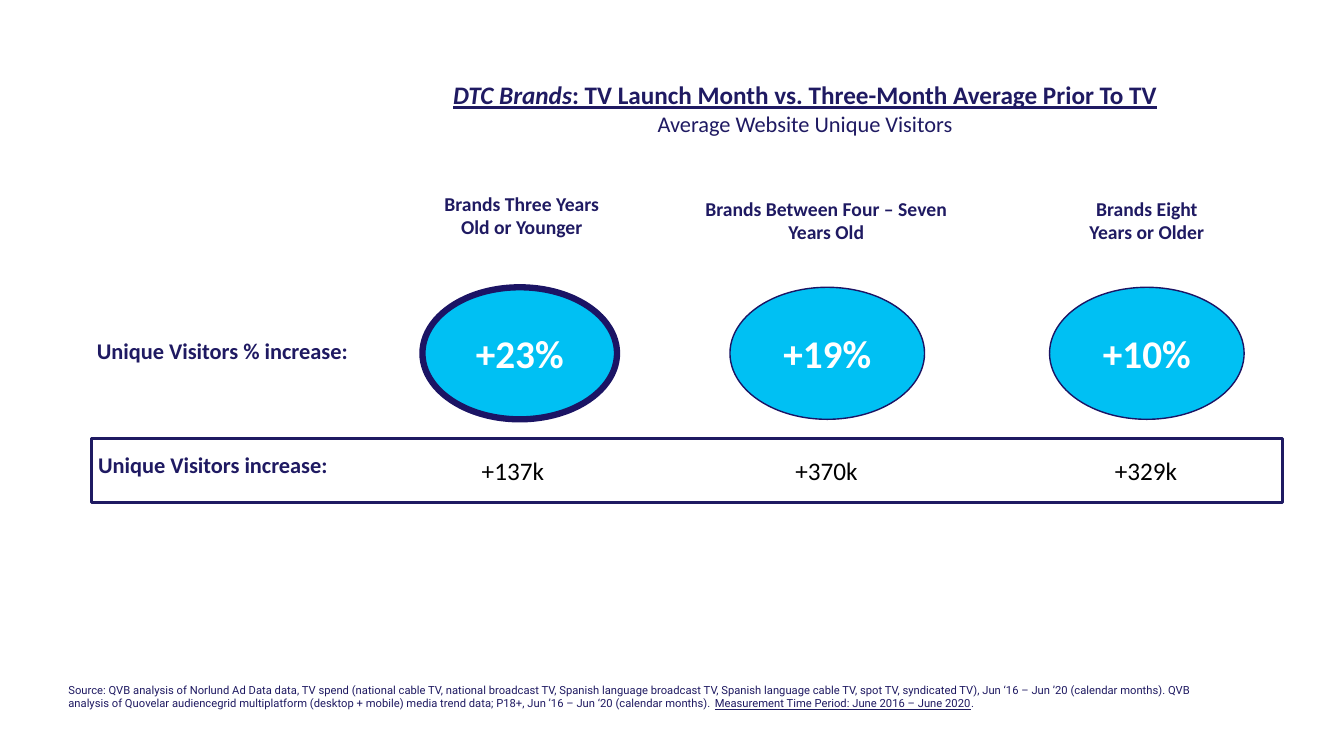
"""Build the slide on website visitors of DTC brands around their TV launch."""
from pptx import Presentation
from pptx.dml.color import RGBColor
from pptx.enum.shapes import MSO_SHAPE as Shape
from pptx.enum.text import MSO_ANCHOR as Anchor, MSO_AUTO_SIZE as AutoSize, PP_ALIGN as Align
from pptx.util import Inches, Pt

NAVY = RGBColor(0x1F, 0x1A, 0x62)
OUTLINE = RGBColor(0x1B, 0x14, 0x64)
CYAN = RGBColor(0x00, 0xC0, 0xF3)
WHITE = RGBColor(0xFF, 0xFF, 0xFF)
BLACK = RGBColor(0x00, 0x00, 0x00)

AGE_GROUPS = [
    ("Brands Three Years Old or Younger", (4.25, 1.85, 1.85, 0.57), "+23%", 4.19, 4.5, "+137k", 4.68),
    ("Brands Between Four – Seven Years Old", (6.81, 1.9, 2.77, 0.57), "+19%", 7.24, 1, "+370k", 7.79),
    ("Brands Eight Years or Older", (10.64, 1.9, 1.47, 0.57), "+10%", 10.41, 1, "+329k", 10.96),
]
SOURCE = (
    "Source: QVB analysis of Norlund Ad Data data, TV spend (national cable TV, national broadcast TV, "
    "Spanish language broadcast TV, Spanish language cable TV, spot TV, syndicated TV), "
    "Jun ‘16 – Jun ’20 (calendar months). QVB analysis of Quovelar audiencegrid multiplatform "
    "(desktop + mobile) media trend data; P18+, Jun ’16 – Jun ‘20 (calendar months). "
)


def add_span(para, text, size, color=NAVY, bold=False, italic=False, underline=False, font="Calibri"):
    """Add one formatted run to a paragraph."""
    span = para.add_run()
    span.text = text
    style = span.font
    style.name, style.size, style.color.rgb = font, Pt(size), color
    style.bold, style.italic, style.underline = bold, italic, underline


def add_box(page, place, align, wrap=True):
    """Add a text box and return its first paragraph."""
    frame = page.shapes.add_textbox(*map(Inches, place)).text_frame
    frame.word_wrap = wrap
    para = frame.paragraphs[0]
    para.alignment = align
    return para


def add_outlined(page, kind, place, fill, line, width):
    """Add a filled preset shape with an outline."""
    shape = page.shapes.add_shape(kind, *map(Inches, place))
    shape.shadow.inherit = False
    shape.fill.solid()
    shape.fill.fore_color.rgb = fill
    shape.line.color.rgb = line
    shape.line.width = Pt(width)
    return shape


def set_title(page):
    """Place the title and write its two lines."""
    title = page.shapes.title
    title.left, title.top, title.width, title.height = map(Inches, (3.49, 0.74, 8.99, 0.67))
    frame = title.text_frame
    frame.word_wrap, frame.auto_size, frame.vertical_anchor = True, AutoSize.NONE, Anchor.TOP
    heading, subtitle = frame.paragraphs[0], frame.add_paragraph()
    heading.alignment = subtitle.alignment = Align.CENTER
    add_span(heading, "DTC Brands", 18, bold=True, italic=True, underline=True)
    add_span(heading, ": TV Launch Month vs. Three-Month Average Prior To TV", 18, bold=True, underline=True)
    add_span(subtitle, "Average Website Unique Visitors", 16)


def add_age_group(page, label, label_place, percent, left, outline, increase, increase_left):
    """Add the heading, percentage ellipse and visitor increase of one age group."""
    add_span(add_box(page, label_place, Align.CENTER), label, 14, bold=True)
    ellipse = add_outlined(page, Shape.OVAL, (left, 2.85, 1.93, 1.31), CYAN, OUTLINE, outline)
    ellipse.text_frame.vertical_anchor = Anchor.MIDDLE
    para = ellipse.text_frame.paragraphs[0]
    para.alignment = Align.CENTER
    add_span(para, percent, 28, WHITE, bold=True)
    add_span(add_box(page, (increase_left, 4.47, 0.83, 0.4), Align.LEFT, wrap=False), increase, 18, BLACK)


def add_source(page):
    """Add the source note."""
    para = add_box(page, (0.58, 6.73, 11.56, 0.38), Align.LEFT)
    add_span(para, SOURCE, 8, font="Roboto")
    add_span(para, "Measurement Time Period: June 2016 – June 2020", 8, underline=True, font="Roboto")
    add_span(para, ".", 8, font="Roboto")


def main():
    """Build and save the deck."""
    deck = Presentation()
    deck.slide_width, deck.slide_height = Inches(13.33), Inches(7.5)
    page = deck.slides.add_slide(deck.slide_layouts[5])
    set_title(page)
    add_outlined(page, Shape.RECTANGLE, (0.91, 4.35, 11.81, 0.64), WHITE, NAVY, 2.25)
    for text, left, top in (("Unique Visitors % increase:", 0.04, 3.3), ("Unique Visitors increase:", -0.16, 4.43)):
        add_span(add_box(page, (left, top, 3.51, 0.37), Align.RIGHT), text, 16, bold=True)
    for group in AGE_GROUPS:
        add_age_group(page, *group)
    add_source(page)
    deck.save("out.pptx")


if __name__ == "__main__":
    main()
